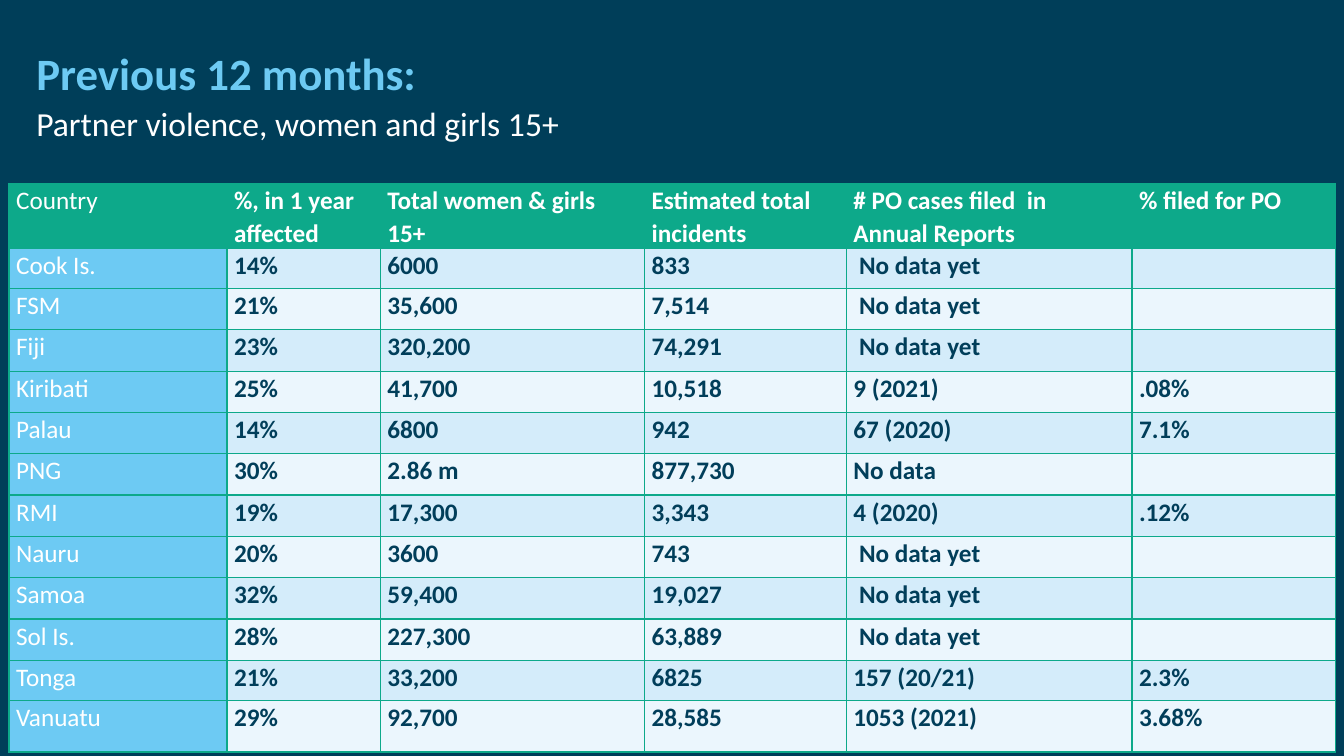
from dataclasses import dataclass
from lxml.etree import SubElement as Sub
from pptx import Presentation
from pptx.dml.color import RGBColor as RGB
from pptx.enum.text import MSO_ANCHOR as Anchor, MSO_AUTO_SIZE as Fit, PP_ALIGN as Align
from pptx.oxml.ns import qn
from pptx.util import Inches, Pt


@dataclass(frozen=True)
class Theme:
    """Colours, font and type sizes of the slide."""
    back: str = "003E59"
    green: str = "0DA98A"
    sky: str = "6DCAF3"
    white: str = "FFFFFF"
    ink: str = "013E5A"
    bands: tuple = ("D4ECFA", "EBF6FD")
    font: str = "Calibri"
    head: int = 32
    sub: int = 24
    body: int = 18


THEME = Theme()
COLS = (2.16, 1.52, 2.62, 2, 2.83, 2.02)
ROWS = (0.63, 0.4, *[0.41] * 9, 0.4, 0.51)
DATA = (
    ("Country", "%, in 1 year affected", "Total women & girls 15+",
     "Estimated total incidents", "# PO cases filed  in Annual Reports", "% filed for PO"),
    ("Cook Is.", "14%", "6000", "833", " No data yet", ""),
    ("FSM", "21%", "35,600", "7,514", " No data yet", ""),
    ("Fiji", "23%", "320,200", "74,291", " No data yet", ""),
    ("Kiribati", "25%", "41,700", "10,518", "9 (2021)", ".08%"),
    ("Palau", "14%", "6800", "942", "67 (2020)", "7.1%"),
    ("PNG", "30%", "2.86 m", "877,730", "No data", ""),
    ("RMI", "19%", "17,300", "3,343", "4 (2020)", ".12%"),
    ("Nauru", "20%", "3600", "743", " No data yet", ""),
    ("Samoa", "32%", "59,400", "19,027", " No data yet", ""),
    ("Sol Is.", "28%", "227,300", "63,889", " No data yet", ""),
    ("Tonga", "21%", "33,200", "6825", "157 (20/21)", "2.3%"),
    ("Vanuatu", "29%", "92,700", "28,585", "1053 (2021)", "3.68%"),
)


def space(para):
    """Set the spacing and alignment shared by all paragraphs."""
    para.alignment = Align.LEFT
    para.line_spacing = 1.07
    para.space_before, para.space_after = Pt(0), Pt(8)


def add_run(para, text, size, color, bold):
    """Append one formatted run to a paragraph."""
    run = para.add_run()
    run.text = text
    font = run.font
    font.name, font.size, font.bold = THEME.font, Pt(size), bold
    font.color.rgb = RGB.from_string(color)


def add_title(slide, left, top, width, height):
    """Fill the title placeholder with the heading and its subject."""
    title = slide.shapes.title
    title.left, title.top = Inches(left), Inches(top)
    title.width, title.height = Inches(width), Inches(height)
    frame = title.text_frame
    frame.word_wrap = True
    frame.auto_size = Fit.SHAPE_TO_FIT_TEXT
    frame.vertical_anchor = Anchor.TOP
    para = frame.paragraphs[0]
    space(para)
    add_run(para, "Previous 12 months: ", THEME.head, THEME.sky, True)
    para.add_line_break()
    add_run(para, "Partner violence, women and girls 15+", THEME.sub, THEME.white, False)


def add_edges(cell):
    """Draw a thin green line on each side of a cell."""
    props = cell._tc.get_or_add_tcPr()
    for spot, side in enumerate(("lnL", "lnR", "lnT", "lnB")):
        line = Sub(props, qn(f"a:{side}"), w=str(Pt(1)))
        Sub(Sub(line, qn("a:solidFill")), qn("a:srgbClr"), val=THEME.green)
        props.insert(spot, line)


def fill_cell(cell, text, row, col):
    """Style a cell by its place in the table and write its text."""
    if row == 0:
        fill, color = THEME.green, THEME.white
    elif col == 0:
        fill, color = THEME.sky, THEME.white
    else:
        fill, color = THEME.bands[(row - 1) % 2], THEME.ink
    cell.fill.solid()
    cell.fill.fore_color.rgb = RGB.from_string(fill)
    cell.margin_left = cell.margin_right = Inches(0.07)
    cell.margin_top = cell.margin_bottom = 0
    add_edges(cell)
    para = cell.text_frame.paragraphs[0]
    space(para)
    if text:
        add_run(para, text, THEME.body, color, col > 0)


def add_grid(slide, left, top, width, height):
    """Add the table of countries to the given box."""
    table = slide.shapes.add_table(len(ROWS), len(COLS), Inches(left), Inches(top),
                                   Inches(width), Inches(height)).table
    for col, size in zip(table.columns, COLS):
        col.width = Inches(size * width / sum(COLS))
    for row, size in zip(table.rows, ROWS):
        row.height = Inches(size * height / sum(ROWS))
    for row, texts in enumerate(DATA):
        for col, text in enumerate(texts):
            fill_cell(table.cell(row, col), text, row, col)


def main():
    """Build the slide and save it."""
    deck = Presentation()
    deck.slide_width, deck.slide_height = Inches(13.33), Inches(7.5)
    slide = deck.slides.add_slide(deck.slide_layouts[5])
    slide.background.fill.solid()
    slide.background.fill.fore_color.rgb = RGB.from_string(THEME.back)
    add_grid(slide, 0.09, 1.82, 13.16, 5.63)
    add_title(slide, 0.26, 0.37, 9.53, 1.09)
    deck.save("out.pptx")


if __name__ == "__main__":
    main()
